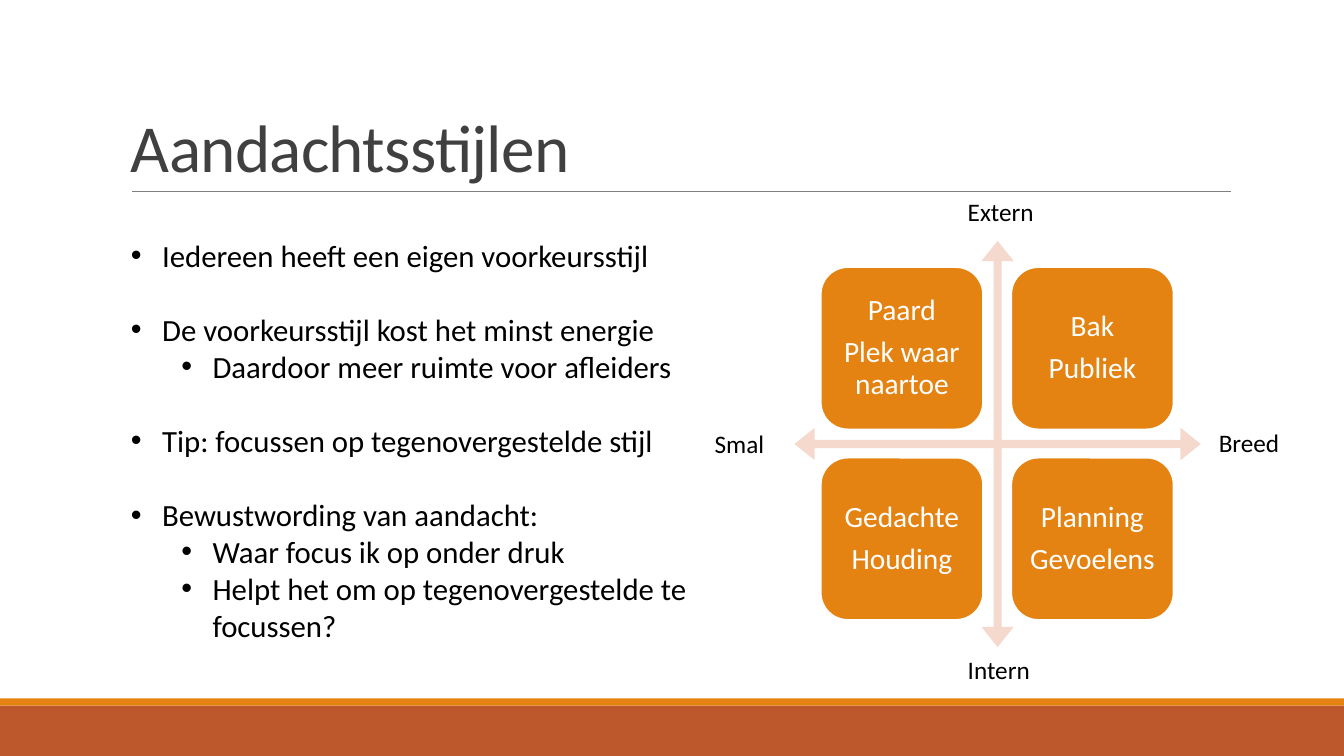
from dataclasses import dataclass
from lxml.etree import SubElement as Sub
from pptx import Presentation as Deck
from pptx.dml.color import RGBColor as Rgb
from pptx.enum.shapes import MSO_CONNECTOR as Con, MSO_SHAPE as Kind
from pptx.enum.text import MSO_ANCHOR as Anchor, PP_ALIGN as Align
from pptx.oxml.ns import qn
from pptx.util import Inches, Pt


@dataclass(frozen=True)
class Theme:
    """Colours, font and type sizes."""
    font: str = "Calibri"
    ink: str = "000000"
    dark: str = "404040"
    white: str = "FFFFFF"
    rule: str = "808080"
    rust: str = "BD582C"
    amber: str = "E48312"
    blush: str = "F5D9CC"
    title: int = 48
    body: int = 22
    card: int = 21
    label: int = 18
    gap: float = 26.5


class Page:
    """Draws on one slide, on a grid of ten columns and rows to the inch."""

    def __init__(self, deck, theme):
        self.theme = theme
        self.slide = deck.slides.add_slide(deck.slide_layouts[6])
        self.shapes = self.slide.shapes

    def grid(self, *cells):
        return [Inches(cell / 10) for cell in cells]

    def style(self, para, size, color):
        para.font.name = self.theme.font
        para.font.size = Pt(size)
        para.font.color.rgb = Rgb.from_string(color)

    def shape(self, kind, box, fill, edge=None, adjust=()):
        item = self.shapes.add_shape(kind, *self.grid(*box))
        item.shadow.inherit = False
        item.fill.solid()
        item.fill.fore_color.rgb = Rgb.from_string(fill)
        if edge:
            item.line.color.rgb = Rgb.from_string(edge)
            item.line.width = Pt(1.25)
        else:
            item.line.fill.background()
        for spot, value in enumerate(adjust):
            item.adjustments[spot] = value
        return item

    def line(self, ends, color, width):
        item = self.shapes.add_connector(Con.STRAIGHT, *self.grid(*ends))
        item.line.color.rgb = Rgb.from_string(color)
        item.line.width = Pt(width)
        Sub(item._element.spPr, qn("a:effectLst"))

    def text(self, box, words, size, color):
        frame = self.shapes.add_textbox(*self.grid(*box)).text_frame
        frame.word_wrap = True
        para = frame.paragraphs[0]
        para.text = words
        self.style(para, size, color)
        return frame

    def title(self, box, words):
        frame = self.text(box, words, self.theme.title, self.theme.dark)
        frame.vertical_anchor = Anchor.BOTTOM
        para = frame.paragraphs[0]
        para.line_spacing = 0.85
        para.runs[0].font._element.set("spc", "-50")

    def card(self, box, lines):
        look = self.theme
        item = self.shape(Kind.ROUNDED_RECTANGLE, box, look.amber, look.white)
        frame = item.text_frame
        frame.word_wrap = True
        frame.vertical_anchor = Anchor.MIDDLE
        frame.margin_left = frame.margin_right = Inches(0.09)
        frame.margin_top = frame.margin_bottom = Inches(0.09)
        frame.text = "\n".join(lines)
        for para in frame.paragraphs:
            para.alignment = Align.CENTER
            para.line_spacing = 0.9
            para.space_after = Pt(0.35 * look.card)
            self.style(para, look.card, look.white)

    def bullets(self, box, groups):
        look = self.theme
        rows = [(rank, words) for group in groups
                for rank, words in enumerate(group)]
        frame = self.text(box, rows[0][1], look.body, look.ink)
        for spot, (rank, words) in enumerate(rows):
            para = frame.add_paragraph() if spot else frame.paragraphs[0]
            para.text = words
            para.level = min(rank, 1)
            self.style(para, look.body, look.ink)
            para.space_before = Pt(look.gap if spot and not rank else 0)
            props = para._p.get_or_add_pPr()
            props.set("marL", str(Inches(0.31 + 0.5 * para.level)))
            props.set("indent", str(-Inches(0.31)))
            Sub(props, qn("a:buFont")).set("typeface", "Arial")
            Sub(props, qn("a:buChar")).set("char", "•")


CARDS = [
    [("Paard", "Plek waar naartoe"), ("Bak", "Publiek")],
    [("Gedachte", "Houding"), ("Planning", "Gevoelens")],
]
LABELS = [
    ("Smal", 69.9, 42), ("Extern", 95, 19),
    ("Intern", 95, 64.4), ("Breed", 119.9, 41.9),
]
POINTS = [
    ["Iedereen heeft een eigen voorkeursstijl"],
    ["De voorkeursstijl kost het minst energie",
     "Daardoor meer ruimte voor afleiders"],
    ["Tip: focussen op tegenovergestelde stijl"],
    ["Bewustwording van aandacht:", "Waar focus ik op onder druk",
     "Helpt het om op tegenovergestelde te focussen?"],
]


def main():
    """Build and save the slide."""
    deck = Deck()
    deck.slide_width, deck.slide_height = Inches(13.33), Inches(7.5)
    look = Theme()
    page = Page(deck, look)
    page.shape(Kind.RECTANGLE, (0, 70, 133.3, 5), look.rust)
    page.shape(Kind.RECTANGLE, (0, 69.3, 133.3, 0.7), look.amber)
    page.line((13.1, 19, 122.1, 19), look.rule, 0.5)
    page.title((12, 3.1, 110, 15.9), "Aandachtsstijlen")
    page.shape(Kind.QUAD_ARROW, (78.8, 23.9, 40.3, 40.3), look.blush,
               adjust=(0.02, 0.04, 0.05))
    side, step = 16.1, 18.9
    for row, pair in enumerate(CARDS):
        for col, lines in enumerate(pair):
            spot = (81.4 + col * step, 26.5 + row * step)
            page.card((*spot, side, side), lines)
    for words, left, top in LABELS:
        page.text((left, top, 13.4, 4), words, look.label, look.ink)
    page.bullets((12, 23, 60.8, 50.2), POINTS)
    deck.save("out.pptx")


if __name__ == "__main__":
    main()
